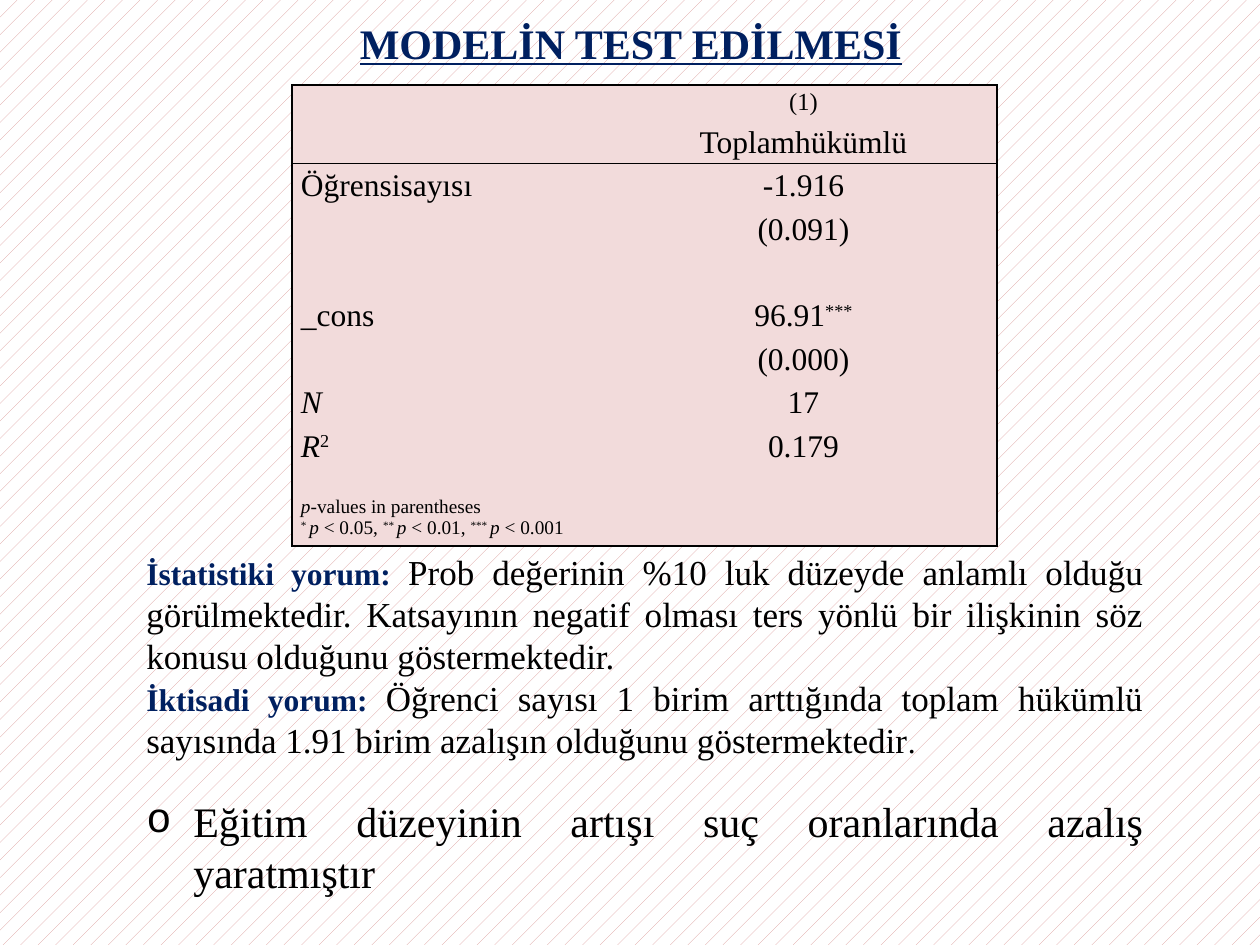
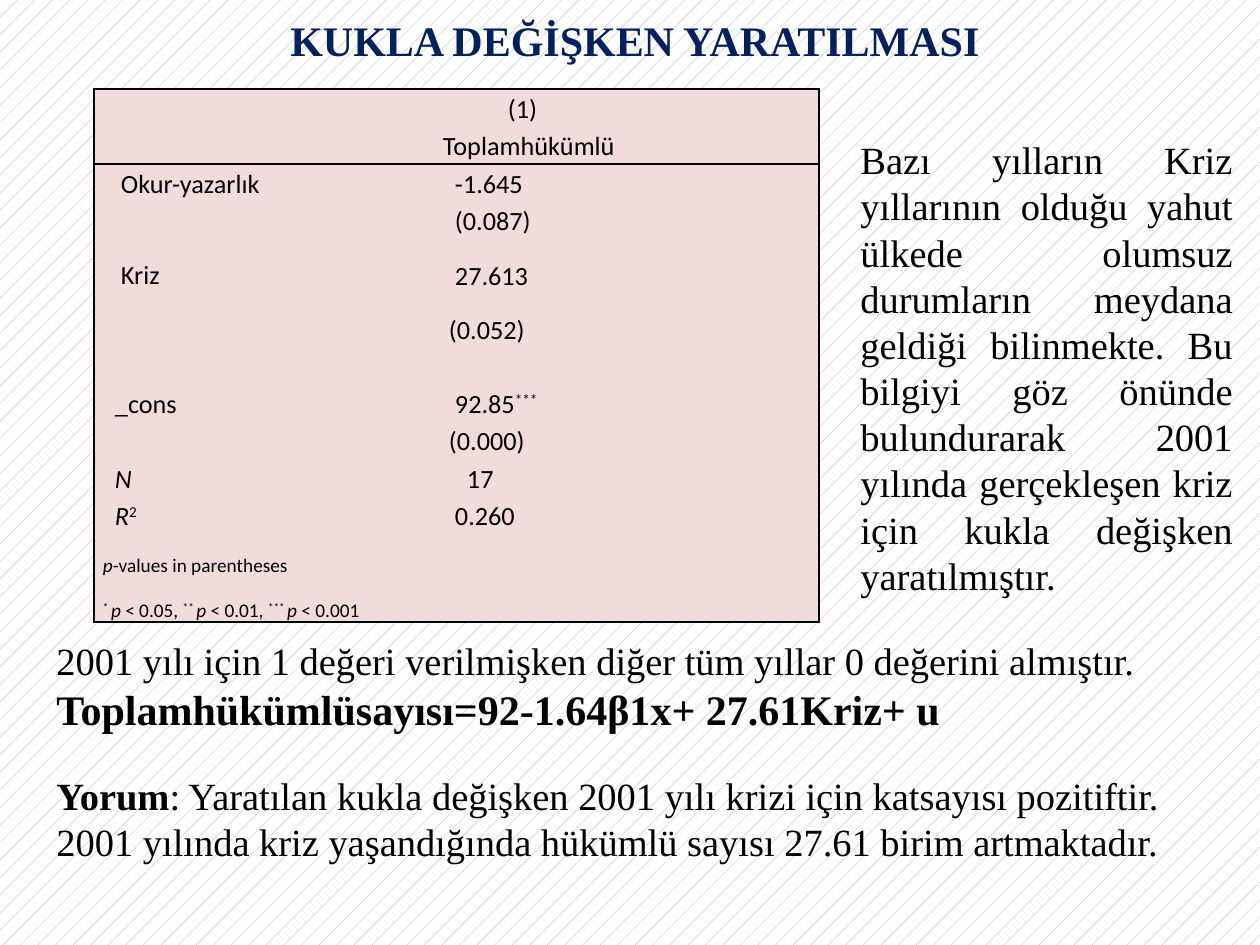
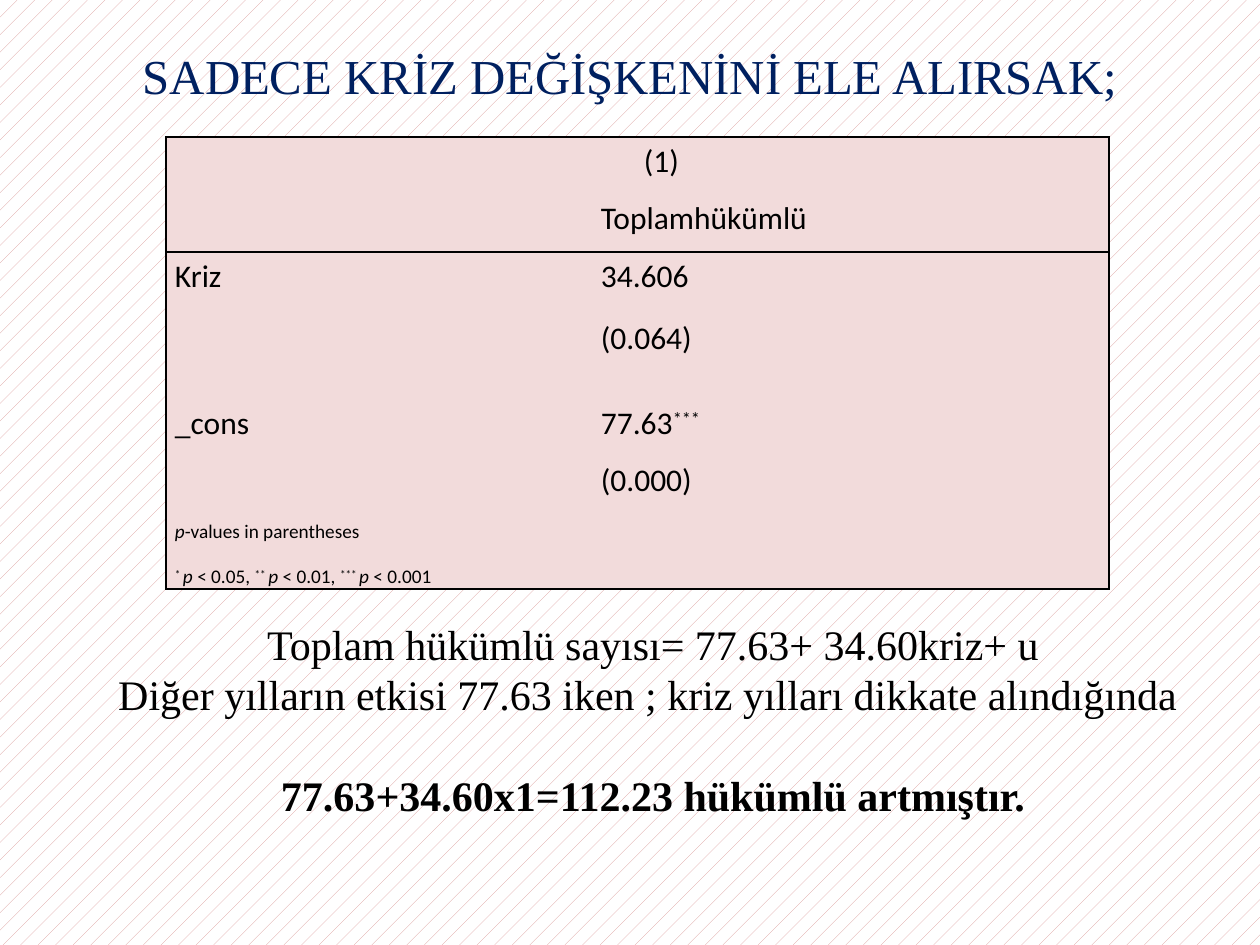
from dataclasses import dataclass

from lxml.etree import SubElement
from pptx import Presentation
from pptx.dml.color import RGBColor
from pptx.enum.dml import MSO_PATTERN
from pptx.enum.text import MSO_ANCHOR, MSO_AUTO_SIZE, PP_ALIGN
from pptx.oxml.ns import qn
from pptx.util import Pt

SCALE = 914400 / 126  # EMU in one px
COLOURS = {"navy": "002060", "text": "000000", "cell": "F2DBDB",
           "hatch": "D99694", "paper": "FFFFFF"}
SERIF, SANS = "Times New Roman", "Calibri"
ALIGN = {"left": PP_ALIGN.LEFT, "center": PP_ALIGN.CENTER, "justify": PP_ALIGN.JUSTIFY}


@dataclass
class Para:
    """Spans are plain strings or (text, style): b bold, i italic, u underline,
    s superscript, n navy, and an optional third item for the size."""
    spans: list
    size: float = 18
    align: str = "left"
    line: float = 1.0
    before: float = 0
    after: float = 0
    indent: int = 0
    bullet: str = ""


# Content
P_VALUES = [("p", "i"), "-values in parentheses"]
STARS = [("* ", "s"), ("p", "i"), " < 0.05, ", ("** ", "s"), ("p", "i"),
         " < 0.01, ", ("*** ", "s"), ("p", "i"), " < 0.001"]


def serif_cell(*spans, size=18, align="center"):
    return [Para(list(spans), size, align, line=1.15)]


def sans_cell(*spans, size=15, indent=0):
    return [Para(list(spans), size, line=1.15, after=10, indent=indent)]


def sans_notes():
    return sans_cell(*P_VALUES, size=11) + sans_cell(*STARS, size=11)


def serif_name(*spans):
    return serif_cell(*spans, align="left")


SERIF_NOTES = [Para(P_VALUES, 11, line=1.15, before=16.6), Para(STARS, 11)]

SLIDES = [
    {
        "title": {"text": "MODELİN TEST EDİLMESİ", "style": "bun", "size": 24,
                  "at": (64, 1, 1134, 83)},
        "table": {
            "at": (292, 85), "font": SERIF, "columns": (318, 387),
            "heights": (35, 43, 43, 43, 43, 43, 43, 43, 122),
            "rows": [
                ([], serif_cell("(1)", size=14)),
                ([], serif_cell("Toplamhükümlü")),
                (serif_name("Öğrensisayısı"), serif_cell("-1.916")),
                ([], serif_cell("(0.091)")),
                ([], []),
                (serif_name("_cons"), serif_cell("96.91", ("***", "s"))),
                ([], serif_cell("(0.000)")),
                (serif_name(("N", "i")), serif_cell("17")),
                (serif_name(("R", "i"), ("2", "s")) + SERIF_NOTES, serif_cell("0.179")),
            ],
        },
        "boxes": [((134, 544, 1022, 401), [
            Para([("İstatistiki yorum: ", "bn", 18),
                  "Prob değerinin %10 luk düzeyde anlamlı olduğu görülmektedir. "
                  "Katsayının negatif olması ters yönlü bir ilişkinin söz konusu "
                  "olduğunu göstermektedir."], 20, "justify"),
            Para([("İktisadi yorum: ", "bn", 18),
                  "Öğrenci sayısı 1 birim arttığında toplam hükümlü sayısında 1.91 "
                  "birim azalışın olduğunu göstermektedir", (".", "", 18)], 20, "justify"),
            Para(["Eğitim düzeyinin artışı suç oranlarında azalış yaratmıştır"],
                 24, "justify", before=20.4, indent=47, bullet="o"),
        ])],
    },
    {
        "title": {"text": "KUKLA DEĞİŞKEN YARATILMASI", "style": "bn", "size": 24,
                  "at": (68, 1, 1134, 77)},
        "table": {
            "at": (94, 89), "font": SANS, "columns": (328, 397),
            "heights": (37, 38, 37, 147, 36, 37, 38, 37, 126),
            "top_margins": {(3, 0): 54},
            "rows": [
                ([], sans_cell("(1)", indent=77)),
                ([], sans_cell("Toplamhükümlü", indent=12)),
                (sans_cell("Okur-yazarlık", indent=18), sans_cell("-1.645", indent=24)),
                (sans_cell("Kriz", indent=18),
                 sans_cell("(0.087)", indent=24) + sans_cell("27.613", indent=24)
                 + sans_cell("(0.052)", indent=18)),
                ([], []),
                (sans_cell("_cons", indent=12), sans_cell("92.85", ("***", "s"), indent=24)),
                ([], sans_cell("(0.000)", indent=18)),
                (sans_cell(("N", "i"), indent=12), sans_cell("17", indent=36)),
                (sans_cell(("R", "i"), ("2", "s"), indent=12) + sans_notes(),
                 sans_cell("0.260", indent=24)),
            ],
        },
        "boxes": [
            ((848, 130, 397, 479), [
                Para(["Bazı yılların Kriz yıllarının olduğu yahut ülkede olumsuz durumların "
                      "meydana geldiği bilinmekte. Bu bilgiyi göz önünde bulundurarak 2001 "
                      "yılında gerçekleşen kriz için kukla değişken yaratılmıştır."],
                     22, "justify")]),
            ((44, 631, 1181, 280), [
                Para(["2001 yılı için 1 değeri verilmişken diğer tüm yıllar 0 değerini "
                      "almıştır."], 22, "justify"),
                Para([("Toplamhükümlüsayısı=92-1.64β1x+ 27.61Kriz+ u", "b")], 24, "justify"),
                Para([("Yorum", "b"), ": Yaratılan kukla değişken 2001 yılı krizi için "
                      "katsayısı pozitiftir. "], 22, "justify", before=21.6),
                Para(["2001 yılında kriz yaşandığında hükümlü sayısı 27.61 birim "
                      "artmaktadır."], 22, "justify")]),
        ],
    },
    {
        "title": {"text": "SADECE KRİZ DEĞİŞKENİNİ ELE ALIRSAK;", "style": "n",
                  "size": 27.9, "at": (63, 38, 1134, 74)},
        "table": {
            "at": (166, 137), "font": SANS, "columns": (426, 517),
            "heights": (57, 58, 147, 57, 133),
            "top_margins": {(4, 0): 61},
            "rows": [
                ([], sans_cell("(1)", size=18, indent=43)),
                ([], sans_cell("Toplamhükümlü", size=18)),
                (sans_cell("Kriz", size=18),
                 sans_cell("34.606", size=18) + sans_cell("(0.064)", size=18)),
                (sans_cell("_cons", size=18), sans_cell("77.63", ("***", "s"), size=18)),
                (sans_notes(), sans_cell("(0.000)", size=18)),
            ],
        },
        "boxes": [((50, 612, 1206, 331), [
            Para(["Toplam hükümlü sayısı= 77.63+ 34.60kriz+ u"], 24, "center"),
            Para(["Diğer yılların etkisi 77.63 iken ; kriz yılları dikkate alındığında "],
                 24, "center"),
            Para([("77.63+34.60x1=112.23 hükümlü artmıştır.", "b")], 24, "center",
                 before=28.8),
        ])],
    },
]


def px(length):
    return round(length * SCALE)


def rgb(name):
    return RGBColor.from_string(COLOURS[name])


# Text
def add_span(target, text, style, size, font):
    span = target.add_run()
    span.text = text
    span.font.name, span.font.size = font, Pt(size)
    span.font.bold, span.font.italic = "b" in style, "i" in style
    span.font.underline = "u" in style
    span.font.color.rgb = rgb("navy" if "n" in style else "text")
    if "s" in style:
        span.font._element.set("baseline", "30000")


def fill_text(frame, paras, font):
    for number, para in enumerate(paras):
        target = frame.add_paragraph() if number else frame.paragraphs[0]
        target.alignment = ALIGN[para.align]
        target.line_spacing = para.line
        target.space_before, target.space_after = Pt(para.before), Pt(para.after)
        properties = target._p.get_or_add_pPr()
        properties.set("marL", str(px(para.indent)))
        properties.set("indent", str(px(-para.indent if para.bullet else 0)))
        if para.bullet:
            SubElement(properties, qn("a:buFont"), typeface="Courier New")
            SubElement(properties, qn("a:buChar"), char=para.bullet)
        for span in para.spans:
            text, style, *size = (span, "") if isinstance(span, str) else span
            add_span(target, text, style, size[0] if size else para.size, font)


def add_title(page, title):
    shape = page.shapes.title
    shape.left, shape.top, shape.width, shape.height = map(px, title["at"])
    frame = shape.text_frame
    frame.auto_size = MSO_AUTO_SIZE.NONE
    frame.vertical_anchor = MSO_ANCHOR.MIDDLE
    spans = [(title["text"], title["style"])]
    fill_text(frame, [Para(spans, title["size"], "center")], SERIF)


def add_box(page, place, paras):
    frame = page.shapes.add_textbox(*map(px, place)).text_frame
    frame.word_wrap = True
    fill_text(frame, paras, SERIF)


# Regression table
def set_borders(cell, drawn):
    properties = cell._tc.get_or_add_tcPr()
    for edge in "LRTB":
        line = SubElement(properties, qn(f"a:ln{edge}"), w=str(Pt(1)))
        if edge in drawn:
            fill = SubElement(line, qn("a:solidFill"))
            SubElement(fill, qn("a:srgbClr"), val=COLOURS["text"])
        else:
            SubElement(line, qn("a:noFill"))


def add_regression(page, data):
    columns, heights, rows = data["columns"], data["heights"], data["rows"]
    place = (*data["at"], sum(columns), sum(heights))
    table = page.shapes.add_table(len(rows), len(columns), *map(px, place)).table
    table.first_row = table.horz_banding = False
    for column, width in zip(table.columns, columns):
        column.width = px(width)
    for row, height in zip(table.rows, heights):
        row.height = px(height)
    for r, row in enumerate(rows):
        # Outline, and a rule between the two header rows and the body
        edges = ("T" if r in (0, 2) else "") + ("B" if r in (1, len(rows) - 1) else "")
        for c, paras in enumerate(row):
            cell = table.cell(r, c)
            cell.margin_left = cell.margin_right = px(9)
            cell.margin_top = px(data.get("top_margins", {}).get((r, c), 0))
            cell.margin_bottom = 0
            set_borders(cell, edges + "LR"[c])
            cell.fill.solid()
            cell.fill.fore_color.rgb = rgb("cell")
            fill_text(cell.text_frame, paras, data["font"])
            if not paras:  # keeps an empty cell from stretching its row
                SubElement(cell.text_frame.paragraphs[0]._p, qn("a:endParaRPr"), sz="1000")


def main():
    deck = Presentation()
    deck.slide_width, deck.slide_height = px(1260), px(945)

    # Shared hatched background
    paper = deck.slide_master.background.fill
    paper.patterned()
    paper.pattern = MSO_PATTERN.PERCENT_5
    paper.fore_color.rgb, paper.back_color.rgb = rgb("hatch"), rgb("paper")

    for content in SLIDES:
        page = deck.slides.add_slide(deck.slide_layouts[5])
        add_title(page, content["title"])
        for place, paras in content["boxes"]:
            add_box(page, place, paras)
        add_regression(page, content["table"])
    deck.save("out.pptx")


if __name__ == "__main__":
    main()
